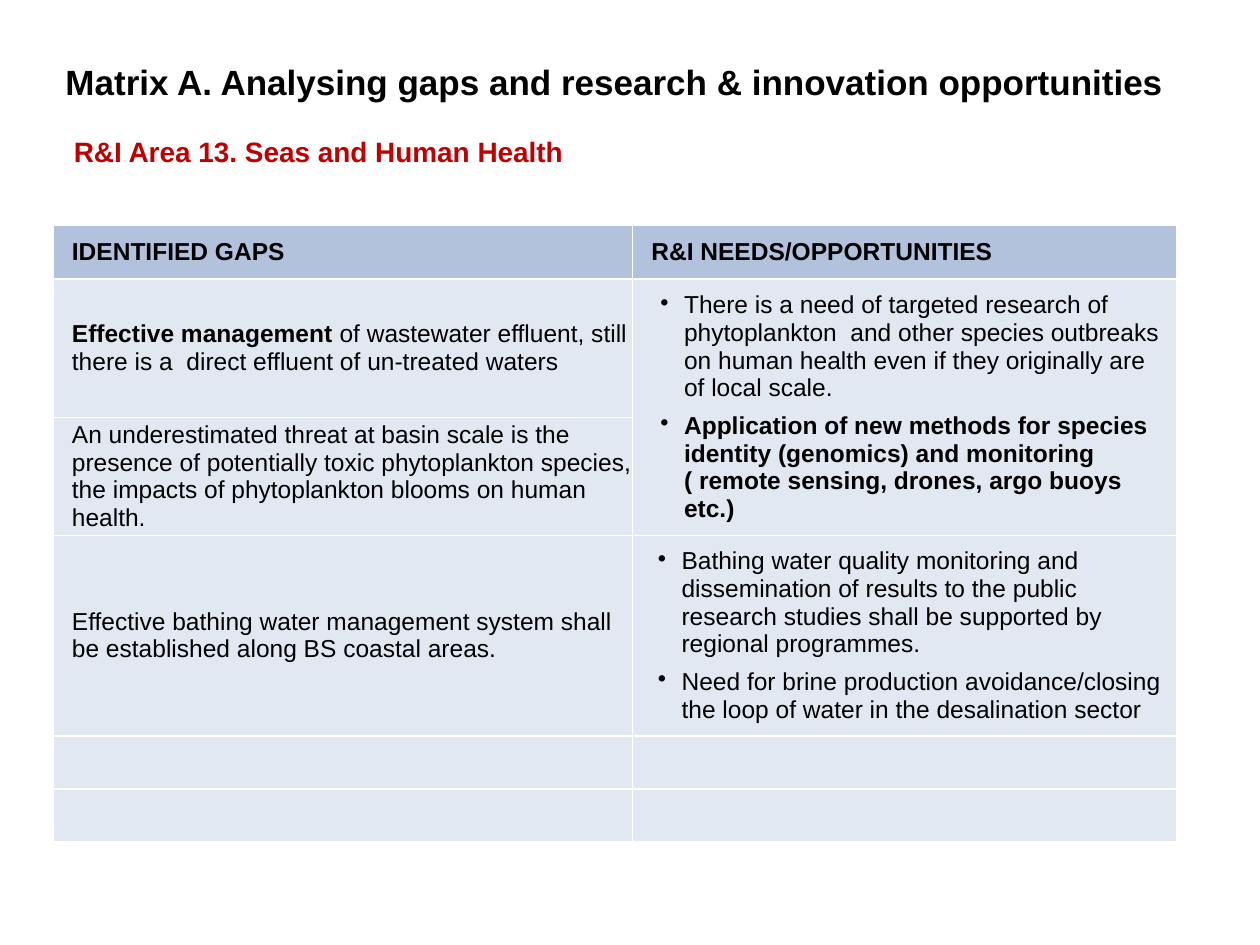
import pptx
import pptx.dml.color
import pptx.enum.text
import pptx.oxml
import pptx.oxml.ns
import pptx.util
from pptx.util import Cm

COLOURS = {"text": "000000", "accent": "C00000", "header": "B2C1DC",
           "body": "E1E8F1", "border": "FFFFFF"}
COLUMN_WIDTHS = [11.68, 10.97]
ROW_HEIGHTS = [1.07, 2.8, 2.36, 4.04, 1.07, 1.07]
HEADINGS = ["IDENTIFIED GAPS", "R&I NEEDS/OPPORTUNITIES"]
GAPS = [
    [("Effective management ", True),
     ("of wastewater effluent, still there is a  direct effluent of un-treated waters", False)],
    [("An underestimated threat at basin scale is the presence of potentially toxic "
      "phytoplankton species, the impacts of phytoplankton blooms on human health.", False)],
    [("Effective bathing water management system shall be established along BS "
      "coastal areas.", False)],
]
RESEARCH_NEEDS = [
    [("There is a need of targeted research of phytoplankton  and other species outbreaks "
      "on human health even if they originally are of local scale.", False)],
    [("Application of new methods for species identity (genomics) and monitoring  "
      "( remote sensing, drones, argo buoys etc.)", True)],
]
REGIONAL_NEEDS = [
    [("Bathing water quality monitoring and dissemination of results to the public research "
      "studies shall be supported by regional programmes.", False)],
    [("Need for brine production avoidance/closing the loop of water in the desalination "
      "sector", False)],
]


class MatrixSlide:
    """Holds the text style and the slide, and adds each kind of element."""

    def __init__(self, slide, font="Arial", cell_size=14):
        self.slide = slide
        self.font = font
        self.cell_size = cell_size

    def add_runs(self, paragraph, runs, size, colour="text"):
        for text, bold in runs:
            run = paragraph.add_run()
            run.text = text
            run.font.name = self.font
            run.font.size = pptx.util.Pt(size)
            run.font.bold = bold
            run.font.color.rgb = pptx.dml.color.RGBColor.from_string(COLOURS[colour])

    def add_heading(self, text, box, size, colour="text"):
        frame = self.slide.shapes.add_textbox(*map(Cm, box)).text_frame
        frame.word_wrap = True
        frame.vertical_anchor = pptx.enum.text.MSO_ANCHOR.MIDDLE
        self.add_runs(frame.paragraphs[0], [(text, True)], size, colour)

    def add_matrix(self, left, top):
        matrix = self.slide.shapes.add_table(
            len(ROW_HEIGHTS), len(COLUMN_WIDTHS), Cm(left), Cm(top),
            Cm(sum(COLUMN_WIDTHS)), Cm(sum(ROW_HEIGHTS))).table
        for column, width in zip(matrix.columns, COLUMN_WIDTHS):
            column.width = Cm(width)
        for index, (row, height) in enumerate(zip(matrix.rows, ROW_HEIGHTS)):
            row.height = Cm(height)
            for cell in row.cells:
                self.style_cell(cell, "body" if index else "header")
        return matrix

    def style_cell(self, cell, fill):
        cell.fill.solid()
        cell.fill.fore_color.rgb = pptx.dml.color.RGBColor.from_string(COLOURS[fill])
        properties = cell._tc.get_or_add_tcPr()
        for position, side in enumerate("LRTB"):
            border = pptx.oxml.parse_xml(
                f'<a:ln{side} {pptx.oxml.ns.nsdecls("a")} w="12700"><a:solidFill>'
                f'<a:srgbClr val="{COLOURS["border"]}"/></a:solidFill></a:ln{side}>')
            properties.insert(position, border)

    def fill_cell(self, cell, paragraphs, margin=0, indent=0.38, hanging=0):
        cell.vertical_anchor = pptx.enum.text.MSO_ANCHOR.MIDDLE
        cell.margin_left = cell.margin_right = Cm(margin)
        cell.margin_top = cell.margin_bottom = 0
        for index, runs in enumerate(paragraphs):
            frame = cell.text_frame
            paragraph = frame.add_paragraph() if index else frame.paragraphs[0]
            paragraph.space_before = paragraph.space_after = pptx.util.Pt(3)
            properties = paragraph._p.get_or_add_pPr()
            properties.set("marL", str(Cm(indent)))
            properties.set("indent", str(-Cm(hanging)))
            if hanging:
                properties.append(pptx.oxml.parse_xml(
                    f'<a:buChar {pptx.oxml.ns.nsdecls("a")} char="•"/>'))
            self.add_runs(paragraph, runs, self.cell_size)


def main():
    deck = pptx.Presentation()
    deck.slide_width, deck.slide_height = Cm(25.4), Cm(19.05)
    page = MatrixSlide(deck.slides.add_slide(deck.slide_layouts[6]))
    page.add_heading("Matrix A. Analysing gaps and research & innovation opportunities",
                     (1.07, 0.89, 23.06, 1.5), 20)
    page.add_heading("R&I Area 13. Seas and Human Health",
                     (1.24, 2.59, 12.47, 0.94), 16, "accent")

    matrix = page.add_matrix(1.07, 4.55)
    for column, heading in enumerate(HEADINGS):
        page.fill_cell(matrix.cell(0, column), [[(heading, True)]])
    for row, gap in enumerate(GAPS, start=1):
        page.fill_cell(matrix.cell(row, 0), [gap])
    matrix.cell(1, 1).merge(matrix.cell(2, 1))
    page.fill_cell(matrix.cell(1, 1), RESEARCH_NEEDS, margin=0.18, indent=0.86, hanging=0.48)
    page.fill_cell(matrix.cell(3, 1), REGIONAL_NEEDS, indent=0.99, hanging=0.48)
    deck.save("out.pptx")


if __name__ == "__main__":
    main()
